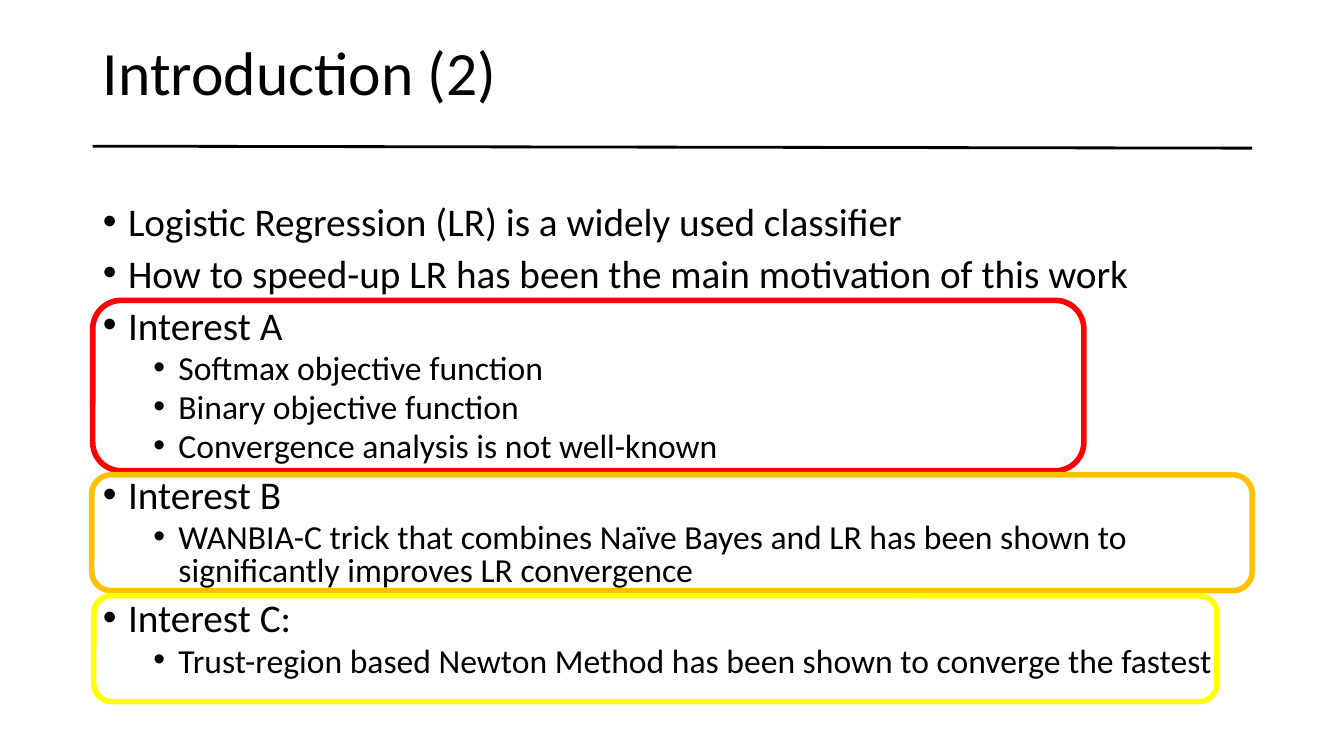
"""Builds the "Introduction (2)" slide with three outlined interests."""
from lxml.etree import SubElement
from pptx import Presentation
from pptx.dml.color import RGBColor
from pptx.enum.shapes import MSO_CONNECTOR, MSO_SHAPE
from pptx.enum.text import MSO_ANCHOR, MSO_AUTO_SIZE, PP_ALIGN
from pptx.oxml.ns import qn
from pptx.util import Pt

EMU_PER_PX = 9144
BLACK = RGBColor(0x00, 0x00, 0x00)
RED = RGBColor(0xFF, 0x00, 0x00)
ORANGE = RGBColor(0xFF, 0xC0, 0x00)
YELLOW = RGBColor(0xFF, 0xFF, 0x00)

POINTS = [
    (0, "Logistic Regression (LR) is a widely used classifier"),
    (0, "How to speed-up LR has been the main motivation of this work"),
    (0, "Interest A"),
    (1, "Softmax objective function"),
    (1, "Binary objective function"),
    (1, "Convergence analysis is not well-known"),
    (0, "Interest B"),
    (1, "WANBIA-C trick that combines Naïve Bayes and LR has been shown to "
        "significantly improves LR convergence"),
    (0, "Interest C:"),
    (1, "Trust-region based Newton Method has been shown to converge the fastest"),
]
INTEREST_FRAMES = [
    ((92, 298, 983, 169), RED),
    ((91, 471, 1151, 115), ORANGE),
    ((93, 591, 1114, 105), YELLOW),
]


def px(length):
    """Turn pixels into EMU."""
    return length * EMU_PER_PX


def place(placeholder, left, top, width, height, anchor):
    """Move a placeholder and return its text frame."""
    placeholder.left, placeholder.top = px(left), px(top)
    placeholder.width, placeholder.height = px(width), px(height)
    frame = placeholder.text_frame
    frame.word_wrap = True
    frame.auto_size = MSO_AUTO_SIZE.NONE
    frame.vertical_anchor = anchor
    return frame


def write(paragraph, text, size, spacing, before=0):
    """Put formatted text into a paragraph."""
    paragraph.alignment = PP_ALIGN.LEFT
    paragraph.line_spacing = spacing
    paragraph.space_before = Pt(before)
    run = paragraph.add_run()
    run.text = text
    run.font.name = "Calibri"
    run.font.size = Pt(size)
    run.font.color.rgb = BLACK


def add_bullet(paragraph, level):
    """Give a paragraph its level, hanging indent and round bullet."""
    paragraph.level = level
    properties = paragraph._p.get_or_add_pPr()
    properties.set("marL", str(px(25 + 50 * level)))
    properties.set("indent", str(px(-25)))
    SubElement(properties, qn("a:buFont")).set("typeface", "Arial")
    SubElement(properties, qn("a:buChar")).set("char", "•")


def fill_points(frame):
    """Write the two-level bullet list."""
    for index, (level, text) in enumerate(POINTS):
        point = frame.add_paragraph() if index else frame.paragraphs[0]
        add_bullet(point, level)
        before = (5 if level else 10) if index else 0
        write(point, text, size=24 if level else 28, spacing=0.8, before=before)


def add_rule(slide, start, end):
    """Draw the line under the title."""
    rule = slide.shapes.add_connector(
        MSO_CONNECTOR.STRAIGHT, *map(px, start), *map(px, end))
    rule.line.color.rgb = BLACK
    rule.line.width = Pt(2)
    SubElement(rule._element.spPr, qn("a:effectLst"))


def add_frame(slide, bounds, color):
    """Draw a rounded outline around one interest."""
    outline = slide.shapes.add_shape(MSO_SHAPE.ROUNDED_RECTANGLE, *map(px, bounds))
    outline.shadow.inherit = False
    outline.fill.background()
    outline.line.color.rgb = color
    outline.line.width = Pt(4)


def main():
    """Build and save the slide."""
    deck = Presentation()
    deck.slide_width, deck.slide_height = px(1333), px(750)
    slide = deck.slides.add_slide(deck.slide_layouts[1])
    heading = place(slide.shapes.title, 92, 2, 1150, 145, MSO_ANCHOR.MIDDLE)
    write(heading.paragraphs[0], "Introduction (2)", size=44, spacing=0.9)
    fill_points(place(slide.placeholders[1], 92, 200, 1150, 500, MSO_ANCHOR.TOP))
    add_rule(slide, (92, 145), (1242, 147))
    for bounds, color in INTEREST_FRAMES:
        add_frame(slide, bounds, color)
    deck.save("out.pptx")


if __name__ == "__main__":
    main()
